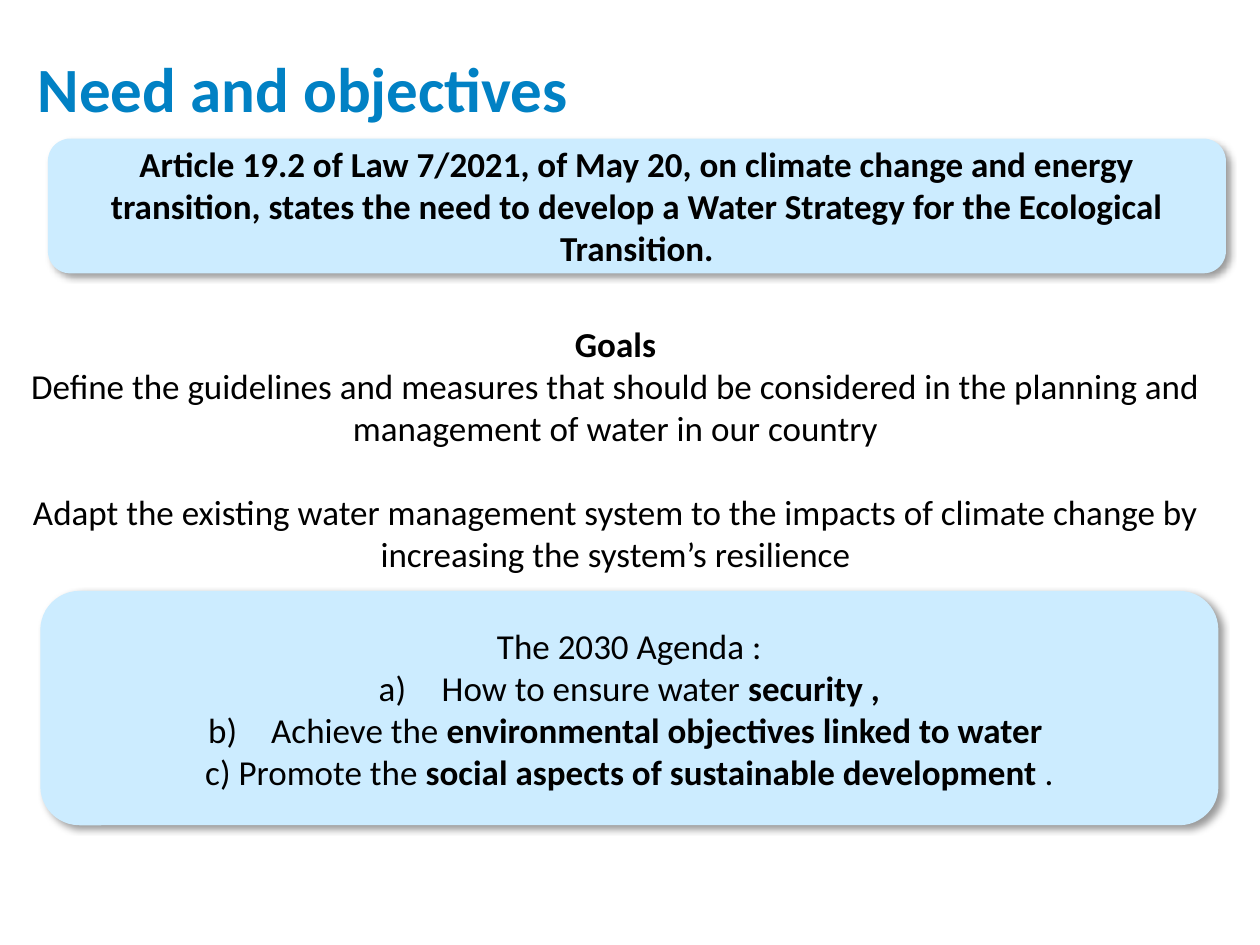
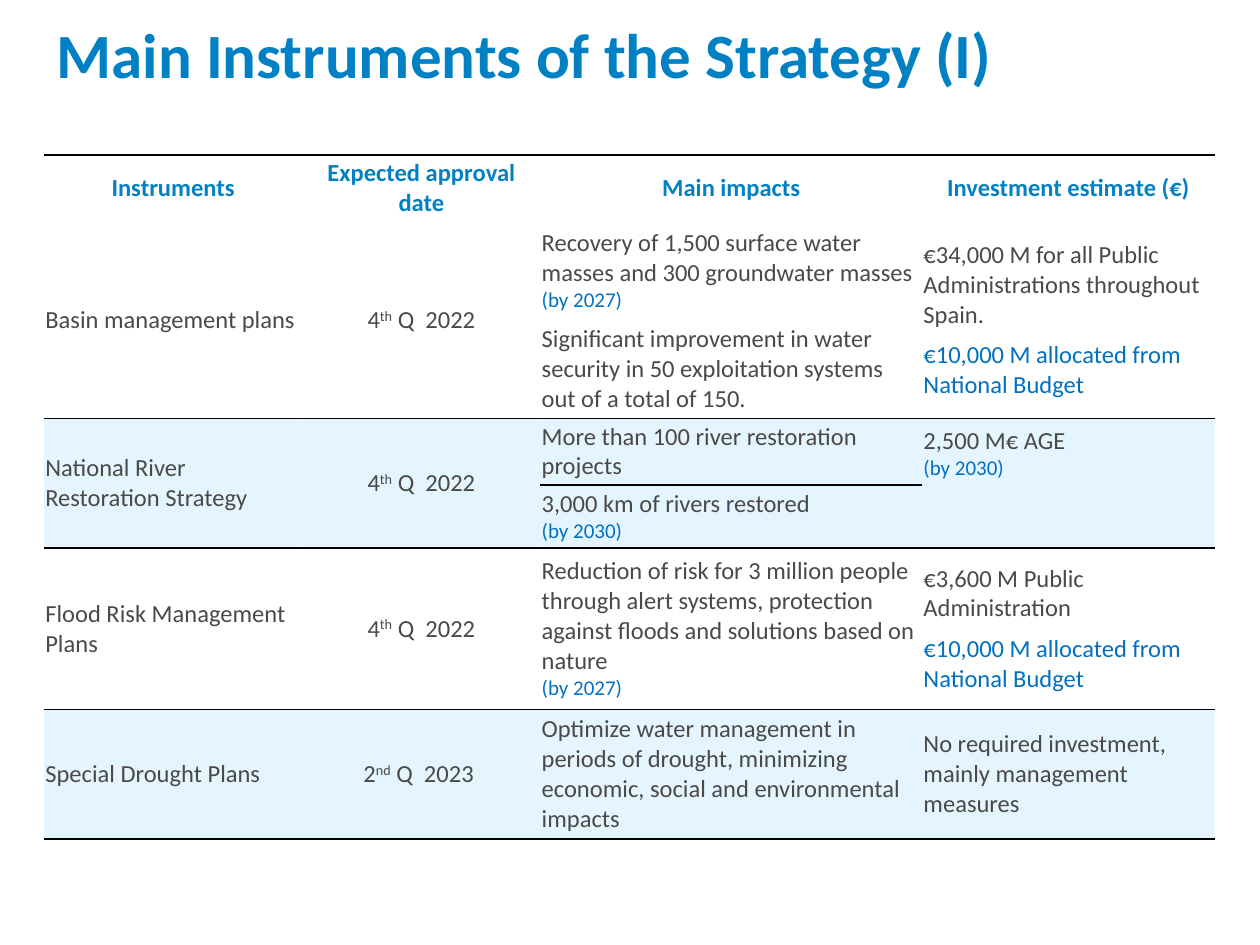
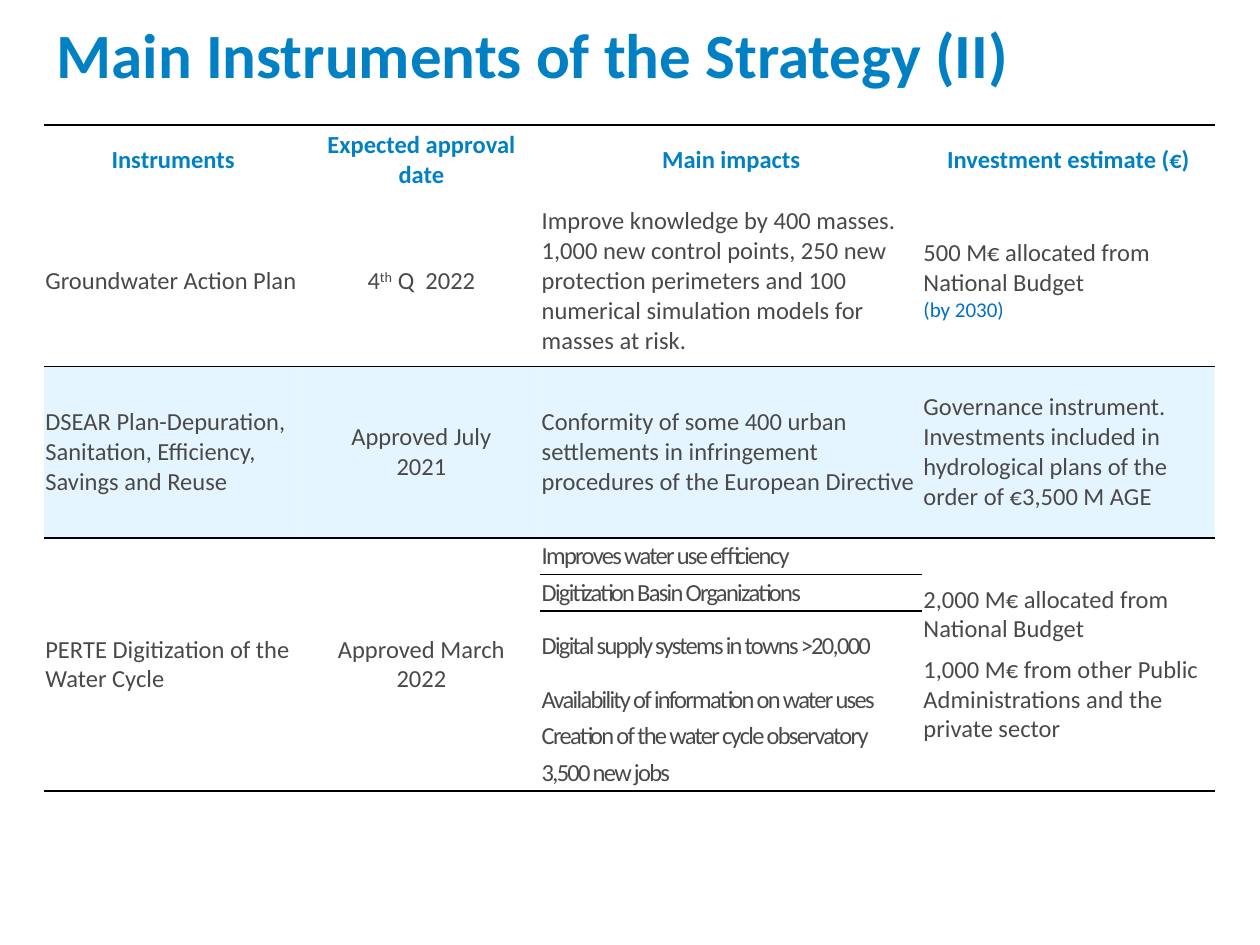
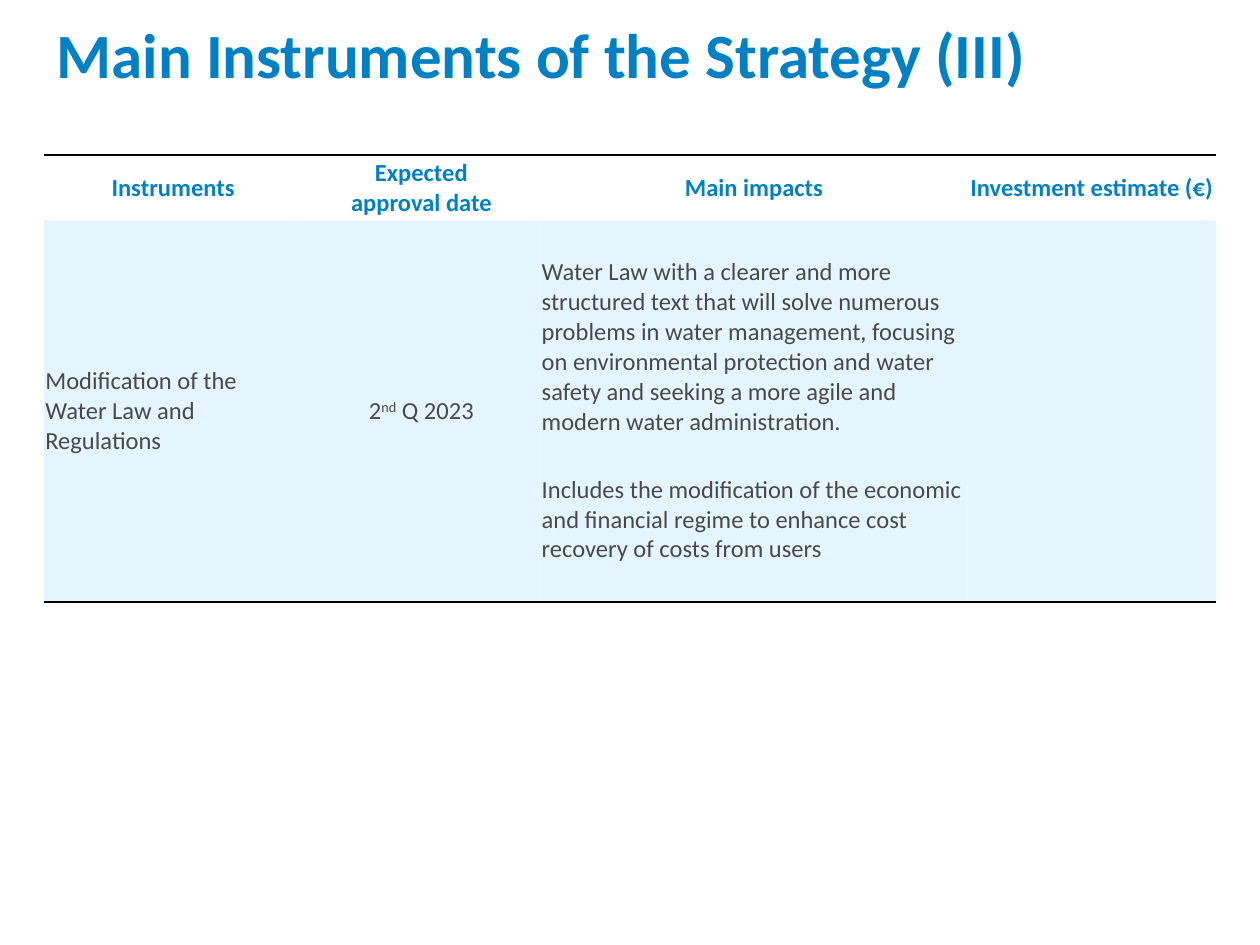
from dataclasses import dataclass

from lxml.etree import SubElement
from pptx import Presentation
from pptx.dml.color import RGBColor
from pptx.enum.shapes import MSO_SHAPE
from pptx.enum.text import MSO_ANCHOR, PP_ALIGN
from pptx.oxml import parse_xml
from pptx.oxml.ns import nsdecls, qn
from pptx.util import Inches, Pt

FONT = "Calibri"
TITLE_BLUE = RGBColor(0x01, 0x81, 0xC4)
ACCENT_BLUE = RGBColor(0x00, 0x70, 0xC0)
PALE_BLUE = RGBColor(0xCC, 0xEC, 0xFF)
GREY = RGBColor(0x4A, 0x49, 0x48)
BLACK = RGBColor(0, 0, 0)
NO_STYLE_NO_GRID = "{2D5ABB26-0587-4C30-8999-92F81FD0307C}"

# Run styles; a run is a plain string or (text, style)
BOLD = {"bold": True}
NOTE = {"size": 12, "color": ACCENT_BLUE}
ACCENT = {"color": ACCENT_BLUE}
SUPER = {"attributes": {"baseline": "30000"}}
TIGHT = {"attributes": {"spc": "-100"}}


@dataclass
class Cell:
    """Paragraphs (lists of runs) of a cell spanning some rows."""
    paragraphs: list
    rows: int = 1
    gap: float = 0
    bottom: float = 0.01
    anchor: MSO_ANCHOR = MSO_ANCHOR.MIDDLE


def text(*lines, **options):
    return Cell([[line] for line in lines], **options)


def quarter(number, suffix, rest, **options):
    return Cell([[number, (suffix, SUPER), rest]], **options)


def tight(line):
    return Cell([[(line, TIGHT)]])


# ---- Content: need and objectives ----
LAW = [["Article 19.2 of Law 7/2021, of May 20, on climate change and energy "
        "transition, states the need to develop a Water Strategy for the "
        "Ecological Transition."]]
GOALS = [
    [("Goals", BOLD)],
    ["Define the guidelines and measures that should be considered in the "
     "planning and management of water in our country"],
    ["Adapt the existing water management system to the impacts of climate "
     "change by increasing the system’s resilience"],
]
AGENDA = [
    ["The 2030 Agenda :"],
    ["How to ensure water ", ("security ,", BOLD)],
    ["Achieve the ", ("environmental objectives linked to water ", BOLD)],
    ["c) Promote the ", ("social aspects of sustainable development ", BOLD), "."],
]
NUMBERED_AGENDA = (1, 2)

# ---- Content: instruments; a row is (height, shaded, cells) ----
INSTRUMENT, DATE, IMPACT, INVESTMENT = EVERY_COLUMN = range(4)
HEADINGS = ["Instruments", "Expected approval date", "Main impacts",
            "Investment estimate (€)"]
BUDGET = [("€10,000 M allocated from National Budget", ACCENT)]

TABLES = [
    {
        "title": "Main Instruments of the Strategy (I)",
        "top": 1.23,
        "widths": [2.05, 1.89, 3.03, 2.32],
        "headings": HEADINGS,
        "heading_height": 0.53,
        "rules": {0: EVERY_COLUMN, 3: EVERY_COLUMN, 4: [IMPACT],
                  5: EVERY_COLUMN, 6: EVERY_COLUMN, 7: EVERY_COLUMN},
        "rows": [
            (0.78, False, [
                text("Basin management plans", rows=2),
                quarter("4", "th", " Q  2022", rows=2),
                Cell([["Recovery of 1,500 surface water masses and 300 "
                       "groundwater masses ", ("(by 2027)", NOTE)]]),
                Cell([["€34,000 M for all Public Administrations throughout "
                       "Spain."], BUDGET], rows=2, gap=6)]),
            (0.78, False, [
                None, None,
                text("Significant improvement in water security in 50 "
                     "exploitation systems out of a total of 150."), None]),
            (0.53, True, [
                text("National River Restoration Strategy", rows=2),
                quarter("4", "th", " Q  2022", rows=2),
                text("More than 100 river restoration projects"),
                Cell([["2,500 M€ AGE"], [("(by 2030)", NOTE)]], rows=2,
                     bottom=0.48)]),
            (0.5, True, [
                None, None,
                Cell([["3,000 km of rivers restored\n", ("(by 2030)", NOTE)]]),
                None]),
            (1.28, False, [
                text("Flood Risk Management Plans"),
                quarter("4", "th", " Q  2022"),
                Cell([["Reduction of risk for 3 million people through alert "
                       "systems, protection against floods and solutions based "
                       "on nature\n", ("(by 2027)", NOTE)]]),
                Cell([["€3,600 M Public Administration"], BUDGET], gap=6)]),
            (1.03, True, [
                text("Special Drought Plans"),
                quarter("2", "nd", " Q  2023\u00a0"),
                text("Optimize water management in periods of drought, "
                     "minimizing economic, social and environmental impacts"),
                text("No required investment, mainly management measures")]),
        ],
    },
    {
        "title": "Main Instruments of the Strategy (II)",
        "top": 0.99,
        "widths": [2.05, 1.89, 3.03, 2.32],
        "headings": HEADINGS,
        "heading_height": 0.56,
        "rules": {0: EVERY_COLUMN, 2: EVERY_COLUMN, 3: EVERY_COLUMN,
                  4: [IMPACT], 9: EVERY_COLUMN},
        "rows": [
            (1.36, False, [
                text("Groundwater Action Plan"),
                quarter("4", "th", " Q  2022"),
                text("Improve knowledge by 400 masses. 1,000 new control "
                     "points, 250 new protection perimeters and 100 numerical "
                     "simulation models for masses at risk."),
                Cell([["500 M€ allocated from National Budget\n",
                       ("(by 2030)", NOTE)]])]),
            (1.36, True, [
                text("DSEAR Plan-Depuration, Sanitation, Efficiency, Savings "
                     "and Reuse"),
                text("Approved July", "2021"),
                text("Conformity of some 400 urban settlements in infringement "
                     "procedures of the European Directive"),
                text("Governance instrument.",
                     "Investments included in hydrological plans of the order "
                     "of €3,500 M AGE")]),
            (0.29, False, [
                text("PERTE Digitization of the Water Cycle", rows=6),
                text("Approved March", "2022", rows=6),
                tight("Improves water use efficiency"),
                text("2,000 M€ allocated from National Budget",
                     "1,000 M€ from other Public Administrations and the "
                     "private sector", rows=6, gap=6)]),
        ] + [
            (height, False, [None, None, tight(impact), None])
            for height, impact in [
                (0.29, "Digitization Basin Organizations"),
                (0.56, "Digital supply systems in towns >20,000"),
                (0.29, "Availability of information on water uses"),
                (0.29, "Creation of the water cycle observatory"),
                (0.29, "3,500 new jobs")]
        ],
    },
    {
        "title": "Main Instruments of the Strategy (III)",
        "top": 1.23,
        "widths": [2.05, 1.89, 3.39, 1.97],
        "headings": [HEADINGS[0], "Expected\napproval date", *HEADINGS[2:]],
        "heading_height": 0.52,
        "rules": {0: EVERY_COLUMN, 3: EVERY_COLUMN},
        "rows": [
            (2.01, True, [
                text("Modification of the Water Law and Regulations", rows=2),
                quarter("2", "nd", " Q 2023", rows=2),
                text("Water Law with a clearer and more structured text that "
                     "will solve numerous problems in water management, "
                     "focusing on environmental protection and water safety "
                     "and seeking a more agile and modern water "
                     "administration."),
                Cell([], rows=2)]),
            (1.02, True, [
                None, None,
                text("Includes the modification of the economic and financial "
                     "regime to enhance cost recovery of costs from users",
                     anchor=MSO_ANCHOR.TOP), None]),
        ],
    },
]


def write(frame, paragraphs, size, color, bold=False, align=PP_ALIGN.LEFT, gap=0):
    """Fill a text frame run by run and return its paragraphs."""
    frame.word_wrap = True
    for index, runs in enumerate(paragraphs):
        paragraph = frame.paragraphs[0] if index == 0 else frame.add_paragraph()
        paragraph.alignment = align
        if gap and index < len(paragraphs) - 1:
            paragraph.space_after = Pt(gap)
        for item in runs:
            words, style = (item, {}) if isinstance(item, str) else item
            for number, line in enumerate(words.split("\n")):
                if number:
                    paragraph.add_line_break()
                if not line:
                    continue
                run = paragraph.add_run()
                run.text = line
                run.font.name = FONT
                run.font.size = Pt(style.get("size", size))
                run.font.bold = style.get("bold", bold)
                run.font.color.rgb = style.get("color", color)
                for key, value in style.get("attributes", {}).items():
                    run._r.get_or_add_rPr().set(key, value)
    return frame.paragraphs


def add_title(slide, title, left=0.35, top=0.13):
    box = slide.shapes.add_textbox(Inches(left), Inches(top), Inches(9.53), Inches(0.7))
    box.text_frame.vertical_anchor = MSO_ANCHOR.MIDDLE
    write(box.text_frame, [[title]], 36, TITLE_BLUE, bold=True)[0].line_spacing = 0.8


def add_panel(slide, left, top, height, paragraphs, bold=False):
    """Rounded pale panel with a soft shadow."""
    panel = slide.shapes.add_shape(MSO_SHAPE.ROUNDED_RECTANGLE, Inches(left),
                                   Inches(top), Inches(9.35), Inches(height))
    panel.fill.solid()
    panel.fill.fore_color.rgb = PALE_BLUE
    panel.line.fill.background()
    panel.shadow.inherit = False
    effects = panel._element.spPr.find(qn("a:effectLst"))
    shadow = SubElement(effects, qn("a:outerShdw"), blurRad=str(Pt(4)),
                        dist=str(Pt(3)), dir=str(45 * 60000), algn="tl",
                        rotWithShape="0")
    shade = SubElement(shadow, qn("a:srgbClr"), val=str(BLACK))
    SubElement(shade, qn("a:alpha"), val="40000")
    panel.text_frame.vertical_anchor = MSO_ANCHOR.MIDDLE
    return write(panel.text_frame, paragraphs, 20, BLACK, bold, PP_ALIGN.CENTER)


def number_with_letter(paragraph):
    properties = paragraph._p.get_or_add_pPr()
    properties.set("marL", str(Inches(0.5)))
    properties.set("indent", str(Inches(-0.5)))
    SubElement(properties, qn("a:buFont"), typeface="+mj-lt")
    SubElement(properties, qn("a:buAutoNum"), type="alphaLcParenR")


def build_objectives(slide):
    add_title(slide, "Need and objectives", 0.2, 0.4)
    add_panel(slide, 0.38, 1.1, 1.07, LAW, bold=True)

    goals = slide.shapes.add_textbox(Inches(0.1), Inches(2.18), Inches(9.57), Inches(2.5))
    frame = goals.text_frame
    frame.margin_left = frame.margin_right = Inches(0.07)
    frame.margin_top, frame.margin_bottom = Inches(0.38), Inches(0.04)
    write(frame, GOALS, 20, BLACK, align=PP_ALIGN.CENTER)[-1].space_before = Pt(24)

    agenda = add_panel(slide, 0.32, 4.69, 1.86, AGENDA)
    for index in NUMBERED_AGENDA:
        number_with_letter(agenda[index])


def style_cell(cell, shaded, edges):
    """Set the fill, then rule the given sides (lnB before lnT)."""
    properties = cell._tc.get_or_add_tcPr()
    if shaded:
        cell.fill.solid()
        cell.fill.fore_color.rgb = PALE_BLUE
        SubElement(properties.find(".//" + qn("a:srgbClr")), qn("a:alpha"), val="50000")
    else:
        cell.fill.background()
    for side in edges:
        properties.insert(0, parse_xml(
            f'<a:{side} {nsdecls("a")} w="{Pt(1)}"><a:solidFill>'
            f'<a:srgbClr val="{BLACK}"/></a:solidFill></a:{side}>'))


def build_instruments(slide, spec):
    add_title(slide, spec["title"])
    headings = [text(heading) for heading in spec["headings"]]
    rows = [(spec["heading_height"], False, headings)] + spec["rows"]
    widths = spec["widths"]
    table_frame = slide.shapes.add_table(
        len(rows), len(widths), Inches(0.35), Inches(spec["top"]),
        Inches(sum(widths)), Inches(sum(row[0] for row in rows)))
    table = table_frame.table
    table.horz_banding = False
    table._tbl.tblPr.find(qn("a:tableStyleId")).text = NO_STYLE_NO_GRID
    for column, width in zip(table.columns, widths):
        column.width = Inches(width)

    for r, (height, shaded, contents) in enumerate(rows):
        table.rows[r].height = Inches(height)
        for c, content in enumerate(contents):
            cell = table.cell(r, c)
            span = content.rows if content else 1
            edges = [side for side, edge in (("lnB", r + span), ("lnT", r))
                     if c in spec["rules"].get(edge, [])]
            style_cell(cell, shaded, edges)
            if content is None:
                continue
            if span > 1:
                cell.merge(table.cell(r + span - 1, c))
            cell.margin_left = cell.margin_right = cell.margin_top = Inches(0.01)
            cell.margin_bottom = Inches(content.bottom)
            cell.vertical_anchor = content.anchor
            heading = r == 0
            write(cell.text_frame, content.paragraphs, 14,
                  TITLE_BLUE if heading else GREY, bold=heading,
                  align=PP_ALIGN.CENTER if heading or c == DATE else PP_ALIGN.LEFT,
                  gap=content.gap)


def main():
    deck = Presentation()
    deck.slide_width, deck.slide_height = Inches(10), Inches(7.5)
    blank = deck.slide_layouts[6]
    build_objectives(deck.slides.add_slide(blank))
    for spec in TABLES:
        build_instruments(deck.slides.add_slide(blank), spec)
    deck.save("out.pptx")


if __name__ == "__main__":
    main()
